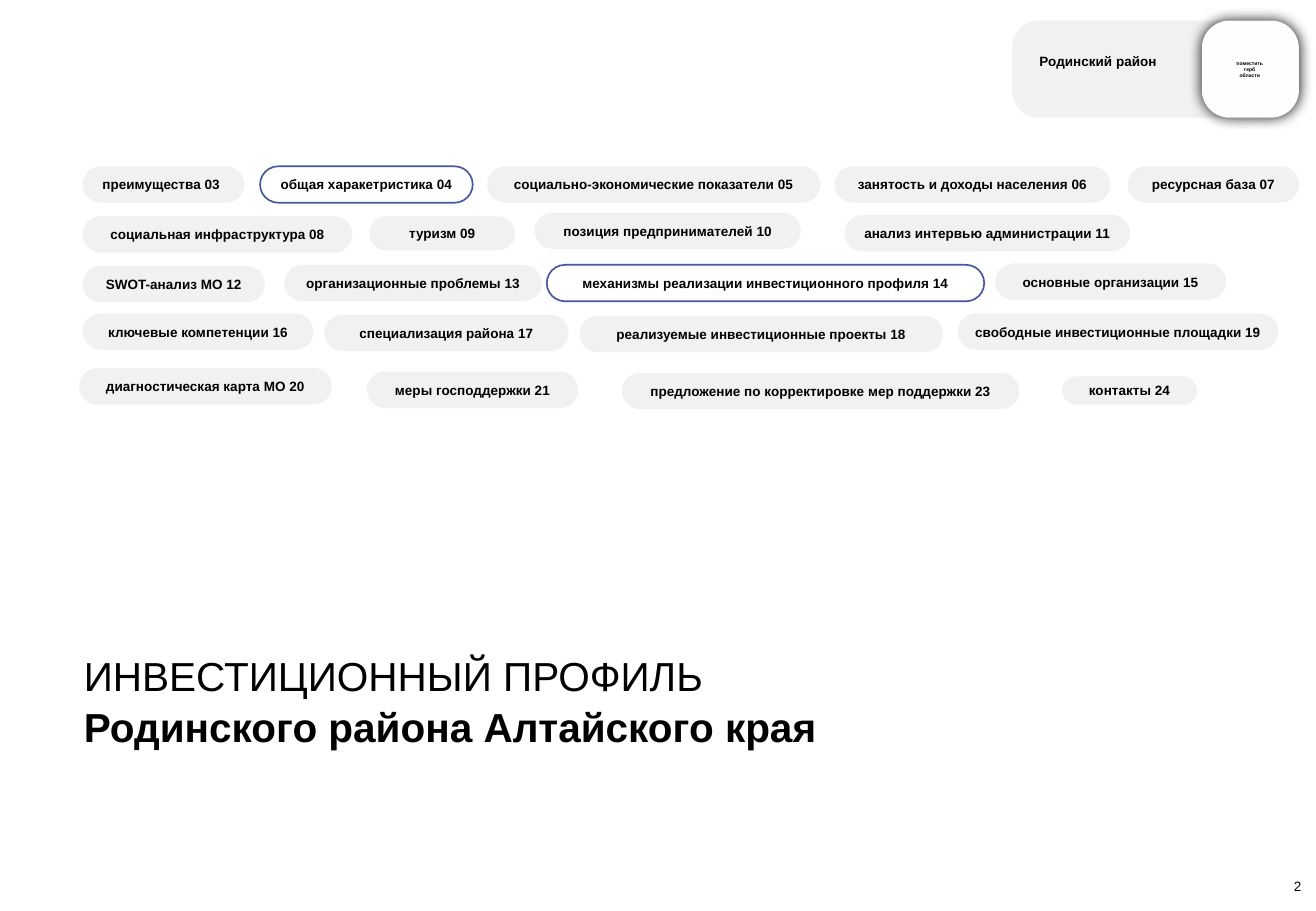
"""Build the contents slide of a district investment profile."""
from dataclasses import dataclass

import lxml.etree
import pptx
import pptx.dml.color
import pptx.enum.shapes
import pptx.enum.text
import pptx.oxml.ns
import pptx.shapes.autoshape
import pptx.slide
import pptx.text.text
import pptx.util

ALIGN = pptx.enum.text.PP_ALIGN
ANCHOR = pptx.enum.text.MSO_ANCHOR
Insets = tuple[float, float, float, float]


@dataclass(frozen=True)
class Theme:
    font: str = "Arial"
    text: str = "000000"
    panel: str = "F1F1F1"
    emblem: str = "FEFEFE"
    accent: str = "4756A0"
    title_size: float = 24
    label_size: float = 8
    hint_size: float = 3


@dataclass(frozen=True)
class Box:
    left: float
    top: float
    width: float
    height: float = 21.6

    def lengths(self) -> list[pptx.util.Length]:
        return [pptx.util.Pt(v) for v in (self.left, self.top, self.width, self.height)]


@dataclass(frozen=True)
class Chip:
    text: str
    box: Box
    active: bool = False
    align: ALIGN = ALIGN.CENTER
    insets: Insets = (0, 0, 0, 0)


THEME = Theme()

CHIPS = (
    Chip("преимущества 03", Box(49, 98.6, 95.8), align=ALIGN.LEFT, insets=(8.6, 0, 0, 0)),
    Chip("общая харакетристика 04", Box(154.1, 98.6, 126), active=True),
    Chip("социально-экономические показатели 05", Box(288.7, 98.6, 197.3)),
    Chip("занятость и доходы населения 06", Box(494.6, 98.6, 163.4)),
    Chip("ресурсная база 07", Box(668.2, 98.6, 101.5)),
    Chip("социальная инфраструктура 08", Box(49, 128.2, 159.8)),
    Chip("туризм 09", Box(218.9, 128.2, 86.4, 20.2)),
    Chip("позиция предпринимателей 10", Box(316.8, 126, 157.7)),
    Chip("анализ интервью администрации 11", Box(500.4, 127.4, 169.2)),
    Chip("SWOT-анализ МО 12", Box(49, 157.7, 108)),
    Chip("организационные проблемы 13", Box(168.5, 157, 152.6)),
    Chip("механизмы реализации инвестиционного профиля 14", Box(324, 157, 259.2), active=True),
    Chip("основные организации 15", Box(589.7, 156.2, 136.8)),
    Chip("ключевые компетенции 16", Box(49, 185.8, 136.8)),
    Chip("специализация района 17", Box(192.2, 186.5, 144.7)),
    Chip("реализуемые инвестиционные проекты 18", Box(343.4, 187.2, 215.3)),
    Chip("свободные инвестиционные площадки 19", Box(567.4, 185.8, 190.1)),
    Chip("диагностическая карта МО 20", Box(46.8, 218.2, 149.8)),
    Chip("меры господдержки 21", Box(217.4, 220.3, 125.3)),
    Chip("предложение по корректировке мер поддержки 23", Box(368.6, 221, 235.4)),
    Chip("контакты 24", Box(629.3, 223.2, 79.9, 16.6)),
)


def rgb(value: str) -> pptx.dml.color.RGBColor:
    return pptx.dml.color.RGBColor.from_string(value)


def set_frame(tf: pptx.text.text.TextFrame, anchor: ANCHOR, insets: Insets = (0, 0, 0, 0)) -> None:
    tf.word_wrap = True
    tf.auto_size = pptx.enum.text.MSO_AUTO_SIZE.NONE
    tf.vertical_anchor = anchor
    tf.margin_left, tf.margin_top, tf.margin_right, tf.margin_bottom = map(pptx.util.Pt, insets)


def add_run(p: pptx.text.text._Paragraph, text: str, size: float, bold: bool, align: ALIGN) -> None:
    p.alignment = align
    r = p.add_run()
    r.text = text
    r.font.name = THEME.font
    r.font.size = pptx.util.Pt(size)
    r.font.bold = bold
    r.font.color.rgb = rgb(THEME.text)


def add_rounded(slide: pptx.slide.Slide, box: Box, radius: float,
                fill: str | None, line: str | None = None) -> pptx.shapes.autoshape.Shape:
    sp = slide.shapes.add_shape(pptx.enum.shapes.MSO_SHAPE.ROUNDED_RECTANGLE, *box.lengths())
    sp.adjustments[0] = radius
    sp.shadow.inherit = False
    if fill:
        sp.fill.solid()
        sp.fill.fore_color.rgb = rgb(fill)
    else:
        sp.fill.background()
    if line:
        sp.line.color.rgb = rgb(line)
        sp.line.width = pptx.util.Pt(1)
    else:
        sp.line.fill.background()
    return sp


def add_chip(slide: pptx.slide.Slide, chip: Chip) -> None:
    fill, line = (None, THEME.accent) if chip.active else (THEME.panel, None)
    tf = add_rounded(slide, chip.box, 0.5, fill, line).text_frame
    set_frame(tf, ANCHOR.MIDDLE, chip.insets)
    add_run(tf.paragraphs[0], chip.text, THEME.label_size, True, chip.align)


def add_label(slide: pptx.slide.Slide, box: Box, text: str, size: float,
              bold: bool, align: ALIGN, anchor: ANCHOR) -> None:
    tf = slide.shapes.add_textbox(*box.lengths()).text_frame
    set_frame(tf, anchor)
    add_run(tf.paragraphs[0], text, size, bold, align)


def add_glow(sp: pptx.shapes.autoshape.Shape, blur: float, opacity: int) -> None:
    qn = pptx.oxml.ns.qn
    effects = sp._element.spPr.find(qn("a:effectLst"))
    shadow = lxml.etree.SubElement(effects, qn("a:outerShdw"), blurRad=str(pptx.util.Pt(blur)),
                                   dist="0", dir="0", algn="ctr", rotWithShape="0")
    color = lxml.etree.SubElement(shadow, qn("a:srgbClr"), val=THEME.text)
    lxml.etree.SubElement(color, qn("a:alpha"), val=str(opacity * 1000))


def set_title(slide: pptx.slide.Slide, box: Box, lines: tuple[tuple[str, bool], ...]) -> None:
    sp = slide.shapes.title
    sp.left, sp.top, sp.width, sp.height = box.lengths()
    tf = sp.text_frame
    set_frame(tf, ANCHOR.TOP)
    for i, (text, bold) in enumerate(lines):
        p = tf.add_paragraph() if i else tf.paragraphs[0]
        p.line_spacing = 1.05
        p.space_before = pptx.util.Pt(0)
        add_run(p, text, THEME.title_size, bold, ALIGN.LEFT)


def add_district_badge(slide: pptx.slide.Slide) -> None:
    panel = add_rounded(slide, Box(599.8, 12.2, 169.9, 57.6), 0.275, THEME.panel)
    set_frame(panel.text_frame, ANCHOR.MIDDLE, (11.5, 3.6, 56.9, 12.8))
    add_run(panel.text_frame.paragraphs[0], "Родинский район", THEME.label_size, True, ALIGN.LEFT)
    emblem = add_rounded(slide, Box(712.1, 12.2, 57.6, 57.6), 0.286, THEME.emblem)
    add_glow(emblem, 8.4, 92)
    add_label(slide, Box(731.5, 36, 18, 10.8), "поместить герб области",
              THEME.hint_size, True, ALIGN.CENTER, ANCHOR.TOP)


def main() -> None:
    prs = pptx.Presentation()
    prs.slide_width, prs.slide_height = pptx.util.Pt(779.76), pptx.util.Pt(540)
    slide = prs.slides.add_slide(prs.slide_layouts.get_by_name("Title Only"))
    for chip in CHIPS:
        add_chip(slide, chip)
    set_title(slide, Box(49.7, 384.5, 576, 58.3),
              (("ИНВЕСТИЦИОННЫЙ ПРОФИЛЬ", False), ("Родинского района Алтайского края", True)))
    add_district_badge(slide)
    add_label(slide, Box(713.5, 520.6, 57.6, 9.4), "2",
              THEME.label_size, False, ALIGN.RIGHT, ANCHOR.BOTTOM)
    prs.save("out.pptx")


if __name__ == "__main__":
    main()
